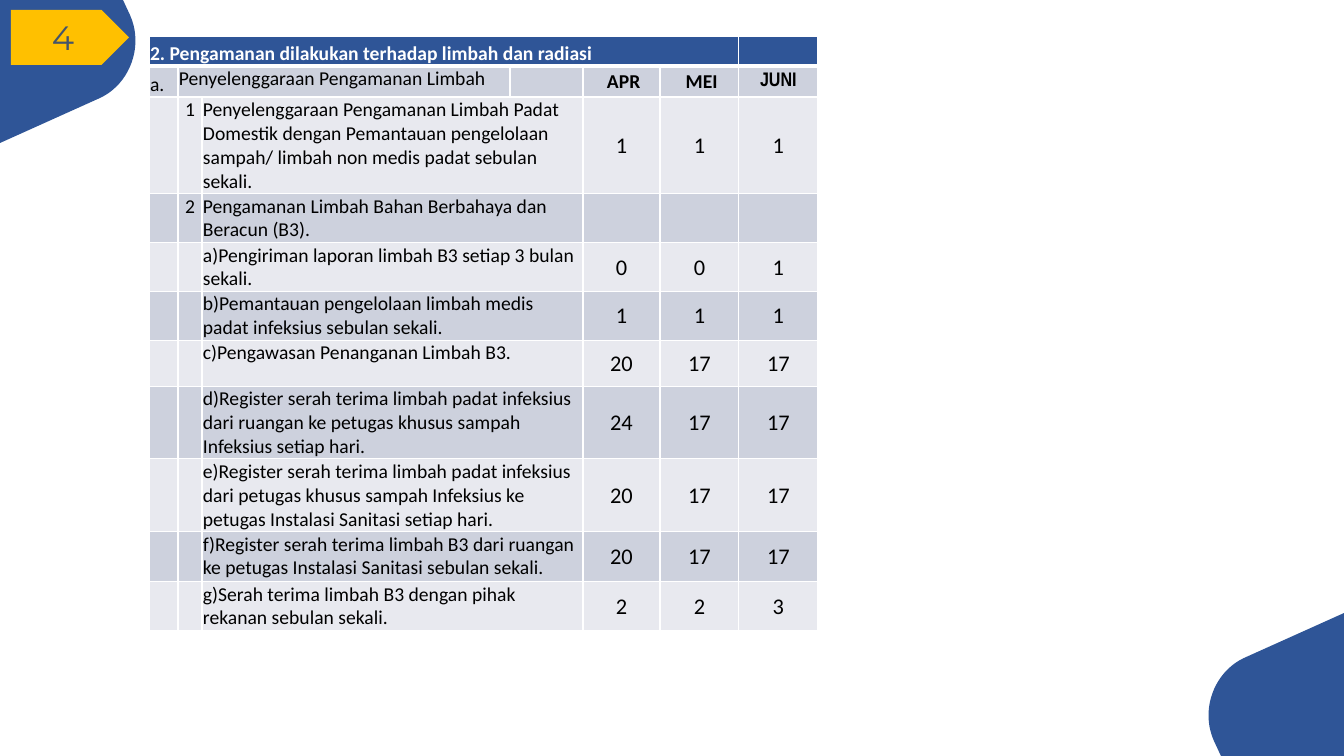
"""Build the slide on waste handling: a monthly table between two corner shapes."""
from lxml.etree import SubElement
from pptx import Presentation
from pptx.dml.color import RGBColor
from pptx.enum.shapes import MSO_SHAPE
from pptx.enum.text import MSO_ANCHOR, PP_ALIGN
from pptx.oxml.ns import qn
from pptx.util import Emu, Pt

W, H = 1344, 756
SCALE = 12192000 / W
COLORS = {"blue": "2F5597", "gold": "FFC000", "slate": "44546A", "white": "FFFFFF",
          "black": "000000", "dark": "CDD1DD", "light": "E8E9EF"}


def px(n):
    return Emu(round(n * SCALE))


def rgb(name):
    return RGBColor.from_string(COLORS[name])


prs = Presentation()
prs.slide_width, prs.slide_height = px(W), px(H)
s = prs.slides.add_slide(prs.slide_layouts[6])

curve = [(130, 15), (144, 46), (130, 84), (100, 98)]
corner = [(0, 0), (123, 0)]
for i in range(21):
    t = i / 20
    weights = ((1 - t) ** 3, 3 * t * (1 - t) ** 2, 3 * t * t * (1 - t), t ** 3)
    corner.append(tuple(sum(w * pt[axis] for w, pt in zip(weights, curve))
                        for axis in (0, 1)))
corner.append((0, 143))

for points in ([(W - x, H - y) for x, y in corner], corner):
    points = [(px(x), px(y)) for x, y in points]
    fb = s.shapes.build_freeform(*points[0])
    fb.add_line_segments(points[1:], close=True)
    sp = fb.convert_to_shape()
    sp.shadow.inherit = False
    sp.fill.solid()
    sp.fill.fore_color.rgb = rgb("blue")
    sp.line.fill.background()

badge = s.shapes.add_shape(MSO_SHAPE.PENTAGON, px(11), px(10), px(118), px(55))
badge.shadow.inherit = False
badge.fill.solid()
badge.fill.fore_color.rgb = rgb("gold")
badge.line.fill.background()
tf = badge.text_frame
tf.vertical_anchor = MSO_ANCHOR.MIDDLE
p = tf.paragraphs[0]
p.text = "4"
p.alignment = PP_ALIGN.CENTER
font = p.runs[0].font
font.name, font.size = "Montserrat", Pt(24.1)
font.color.rgb = rgb("slate")

tasks = [
    ("1", "Penyelenggaraan Pengamanan Limbah Padat Domestik dengan Pemantauan "
     "pengelolaan sampah/ limbah non medis padat sebulan sekali.", "1", "1", "1"),
    ("2", "Pengamanan Limbah Bahan Berbahaya dan Beracun (B3).", "", "", ""),
    ("", "a)Pengiriman laporan limbah B3 setiap 3 bulan sekali.", "0", "0", "1"),
    ("", "b)Pemantauan pengelolaan limbah medis padat infeksius sebulan sekali.",
     "1", "1", "1"),
    ("", "c)Pengawasan Penanganan Limbah B3.", "20", "17", "17"),
    ("", "d)Register serah terima limbah padat infeksius dari ruangan ke petugas "
     "khusus sampah Infeksius setiap hari.", "24", "17", "17"),
    ("", "e)Register serah terima limbah padat infeksius dari petugas khusus sampah "
     "Infeksius ke petugas Instalasi Sanitasi setiap hari.", "20", "17", "17"),
    ("", "f)Register serah terima limbah B3 dari ruangan ke petugas Instalasi "
     "Sanitasi sebulan sekali.", "20", "17", "17"),
    ("", "g)Serah terima limbah B3 dengan pihak rekanan sebulan sekali.",
     "2", "2", "3"),
]
rows = [
    ("2. Pengamanan dilakukan terhadap limbah dan radiasi", "", "", "", "", "", ""),
    ("a.", "Penyelenggaraan Pengamanan Limbah", "", "", " APR", " MEI", "JUNI"),
]
rows += [("", no, task, "", *months) for no, task, *months in tasks]
widths = [29, 24, 308, 73, 77, 79, 79]
heights = [30, 31, 96, 49, 49, 49, 46, 72, 72, 50, 49]

table = s.shapes.add_table(len(rows), len(widths), px(149), px(36),
                           px(sum(widths)), px(sum(heights))).table
for col, width in zip(table.columns, widths):
    col.width = px(width)
for row, height in zip(table.rows, heights):
    row.height = px(height)

for i, values in enumerate(rows):
    for j, value in enumerate(values):
        cell = table.cell(i, j)
        cell.margin_left = cell.margin_right = cell.margin_top = px(1)
        cell.margin_bottom = 0
        month = j >= 4
        if j == 0:
            cell.vertical_anchor = MSO_ANCHOR.BOTTOM
        elif month:
            cell.vertical_anchor = MSO_ANCHOR.MIDDLE
        tcPr = cell._tc.get_or_add_tcPr()
        for side in "LRTB":
            thick = (i, side) in ((0, "B"), (1, "T"))
            ln = SubElement(tcPr, qn("a:ln" + side), w=str(Pt(3 if thick else 1)))
            fill = SubElement(ln, qn("a:solidFill"))
            SubElement(fill, qn("a:srgbClr"), val=COLORS["white"])
        cell.fill.solid()
        cell.fill.fore_color.rgb = rgb("blue" if i == 0 else "dark" if i % 2 else "light")
        p = cell.text_frame.paragraphs[0]
        if not value:
            SubElement(p._p, qn("a:endParaRPr"), sz="1400")
            continue
        p.text = value
        if month or (j == 1 and i > 1):
            p.alignment = PP_ALIGN.CENTER
        font = p.runs[0].font
        font.name = "Arial Narrow" if value == "JUNI" else "Calibri"
        font.size = Pt(16 if month and i > 1 else 14)
        font.bold = i == 0 or (i == 1 and month)
        font.color.rgb = rgb("white" if i == 0 else "black")

table.cell(0, 0).merge(table.cell(0, 5))
table.cell(1, 1).merge(table.cell(1, 2))
for i in range(2, len(rows)):
    table.cell(i, 2).merge(table.cell(i, 3))

prs.save("out.pptx")
